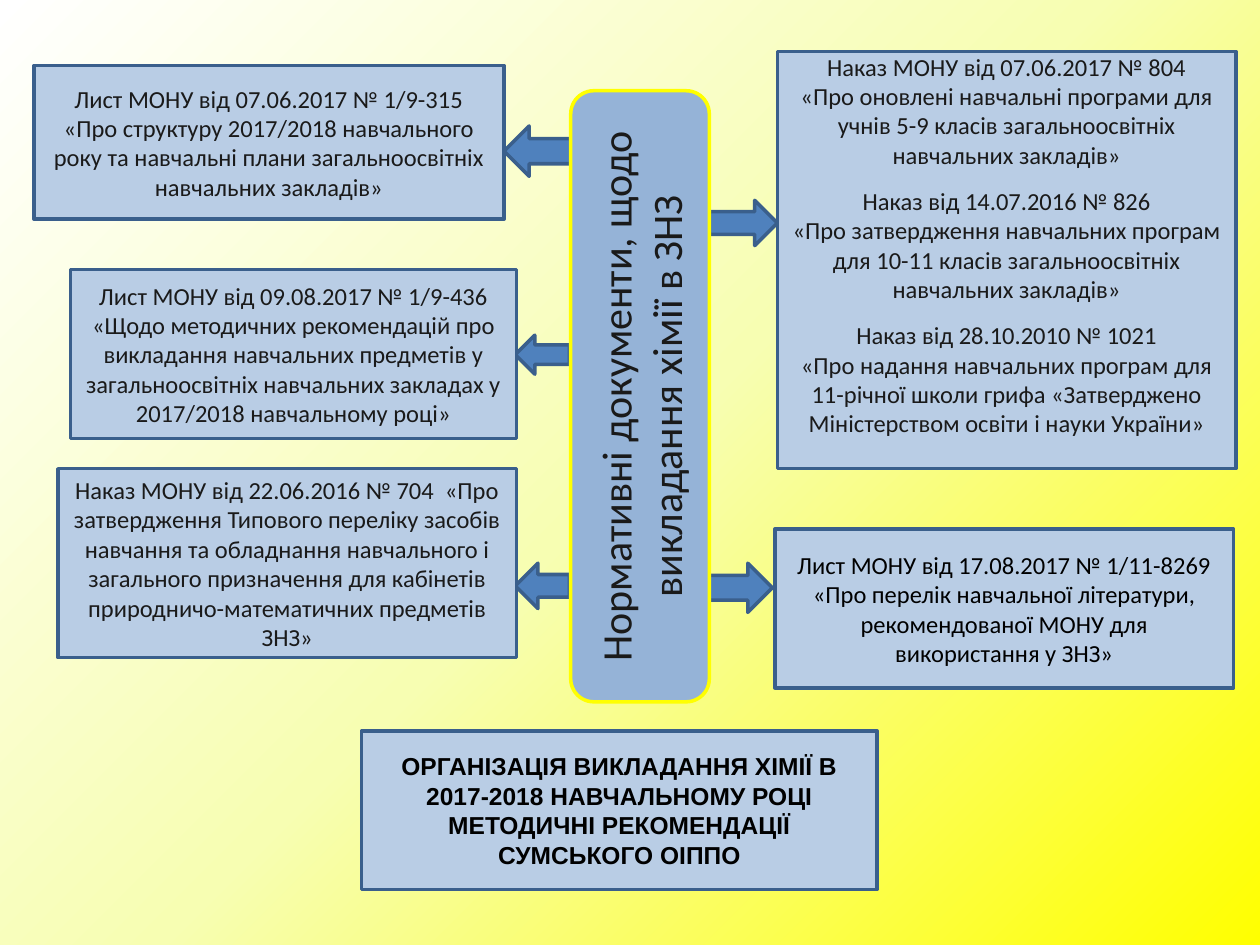
from dataclasses import dataclass

from pptx import Presentation
from pptx.dml.color import RGBColor
from pptx.enum import shapes, text
from pptx.oxml import ns, parse_xml
from pptx.util import Inches, Pt


@dataclass(frozen=True)
class Theme:
    card: str = "B9CDE5"
    panel: str = "95B3D7"
    arrow: str = "4F81BD"
    edge: str = "3A5F8C"
    glow: str = "FFFF00"
    ink: str = "1A1A1A"
    black: str = "000000"
    stops: tuple = ((0, "FFFF00"), (50, "F7FEB2"), (100, "FFFFFF"))
    font: str = "Calibri"
    bold: str = "Arial"
    body: int = 14
    head: int = 24
    gap: float = 9.5
    line: int = 2


THEME = Theme()
KIND = shapes.MSO_SHAPE

# Each card: offset and size within its column, then its paragraphs.
LEFT = [
    ((0, 0, 3.73, 1.22), [
        "Лист МОНУ від 07.06.2017 № 1/9-315 «Про структуру 2017/2018 навчального "
        "року та навчальні плани загальноосвітніх навчальних закладів»"]),
    ((0.29, 1.62, 3.54, 1.34), [
        "Лист МОНУ від 09.08.2017 № 1/9-436 «Щодо методичних рекомендацій про "
        "викладання навчальних предметів у загальноосвітніх навчальних закладах у "
        "2017/2018 навчальному році»"]),
    ((0.19, 3.2, 3.64, 1.5), [
        "Наказ МОНУ від 22.06.2016 № 704  «Про затвердження Типового переліку "
        "засобів навчання та обладнання навчального і загального призначення для "
        "кабінетів природничо-математичних предметів ЗНЗ»"]),
]
ORDERS = [
    "Наказ МОНУ від 07.06.2017 № 804",
    "«Про оновлені навчальні програми для учнів 5-9 класів загальноосвітніх "
    "навчальних закладів»",
    "Наказ від 14.07.2016 № 826",
    "«Про затвердження навчальних програм для 10-11 класів загальноосвітніх "
    "навчальних закладів»",
    "Наказ від 28.10.2010 № 1021",
    "«Про надання навчальних програм для 11-річної школи грифа «Затверджено "
    "Міністерством освіти і науки України»",
]
LETTER = [
    "Лист МОНУ від 17.08.2017 № 1/11-8269 «Про перелік навчальної літератури, "
    "рекомендованої МОНУ для використання у ЗНЗ»"]
ADVICE = [
    "ОРГАНІЗАЦІЯ ВИКЛАДАННЯ ХІМІЇ В 2017-2018 НАВЧАЛЬНОМУ РОЦІ",
    "МЕТОДИЧНІ РЕКОМЕНДАЦІЇ СУМСЬКОГО ОІППО"]
TOPIC = ["Нормативні документи, щодо викладання хімії в ЗНЗ"]
LEFT_ARROWS = [(3.73, 0.48, 0.53, 0.4), (3.82, 2.14, 0.43, 0.31),
               (3.82, 3.95, 0.43, 0.36)]
RIGHT_ARROWS = [(0.04, 1.18, 0.54, 0.36), (0, 4.06, 0.54, 0.39)]


def shift(box, part):
    """Turn a part's offset within a region into a place on the slide."""
    return box[0] + part[0], box[1] + part[1], part[2], part[3]


def draw(slide, kind, box, fill=THEME.card, edge=THEME.edge):
    shape = slide.shapes.add_shape(kind, *map(Inches, box))
    shape.shadow.inherit = False
    shape.fill.solid()
    shape.fill.fore_color.rgb = RGBColor.from_string(fill)
    shape.line.color.rgb = RGBColor.from_string(edge)
    shape.line.width = Pt(THEME.line)
    return shape


def write(shape, lines, size=THEME.body, font=THEME.font, color=THEME.ink,
          bold=False, anchor=text.MSO_ANCHOR.MIDDLE, gaps=()):
    """Fill a shape with paragraphs; gaps lists those with space above."""
    frame = shape.text_frame
    frame.word_wrap = True
    frame.vertical_anchor = anchor
    for i, line in enumerate(lines):
        para = frame.paragraphs[0] if i == 0 else frame.add_paragraph()
        para.alignment = text.PP_ALIGN.CENTER
        para.space_before = Pt(THEME.gap if i in gaps else 0)
        run = para.add_run()
        run.text = line
        run.font.size, run.font.name, run.font.bold = Pt(size), font, bold
        run.font.color.rgb = RGBColor.from_string(color)
    return frame


def back(slide):
    """Radial gradient spreading from the lower right corner."""
    fill = slide.background.fill
    fill.solid()
    stops = "".join(
        f'<a:gs pos="{pos * 1000}"><a:srgbClr val="{color}"/></a:gs>'
        for pos, color in THEME.stops)
    grad = parse_xml(
        f'<a:gradFill {ns.nsdecls("a")} rotWithShape="1"><a:gsLst>{stops}</a:gsLst>'
        '<a:path path="circle"><a:fillToRect l="100000" t="100000"/></a:path>'
        '</a:gradFill>')
    props = slide.background._cSld.bg.bgPr
    props.replace(props.find(ns.qn("a:solidFill")), grad)


def left(slide, box):
    for part in LEFT_ARROWS:
        draw(slide, KIND.LEFT_ARROW, shift(box, part), THEME.arrow)
    for part, lines in LEFT:
        write(draw(slide, KIND.RECTANGLE, shift(box, part)), lines)


def right(slide, box):
    for part in RIGHT_ARROWS:
        draw(slide, KIND.RIGHT_ARROW, shift(box, part), THEME.arrow)
    orders = draw(slide, KIND.RECTANGLE, shift(box, (0.58, 0, 3.64, 3.31)))
    frame = write(orders, ORDERS, anchor=text.MSO_ANCHOR.TOP, gaps=(2, 4))
    frame.margin_top = 0
    letter = draw(slide, KIND.RECTANGLE, shift(box, (0.56, 3.79, 3.64, 1.26)))
    write(letter, LETTER, color=THEME.black)


def centre(slide, box):
    """Rounded panel whose text reads upward."""
    panel = draw(slide, KIND.ROUNDED_RECTANGLE, box, THEME.panel, THEME.glow)
    frame = write(panel, TOPIC, size=THEME.head)
    frame._txBody.bodyPr.set("vert", "vert270")


def foot(slide, box):
    write(draw(slide, KIND.RECTANGLE, box), ADVICE, font=THEME.bold,
          color=THEME.black, bold=True)


def main():
    deck = Presentation()
    deck.slide_width, deck.slide_height = Inches(10), Inches(7.5)
    slide = deck.slides.add_slide(deck.slide_layouts[6])
    back(slide)
    left(slide, (0.27, 0.52, 4.26, 4.7))
    right(slide, (5.59, 0.41, 4.22, 5.05))
    centre(slide, (4.53, 0.72, 1.1, 4.85))
    foot(slide, (2.87, 5.8, 4.09, 1.26))
    deck.save("out.pptx")


if __name__ == "__main__":
    main()
